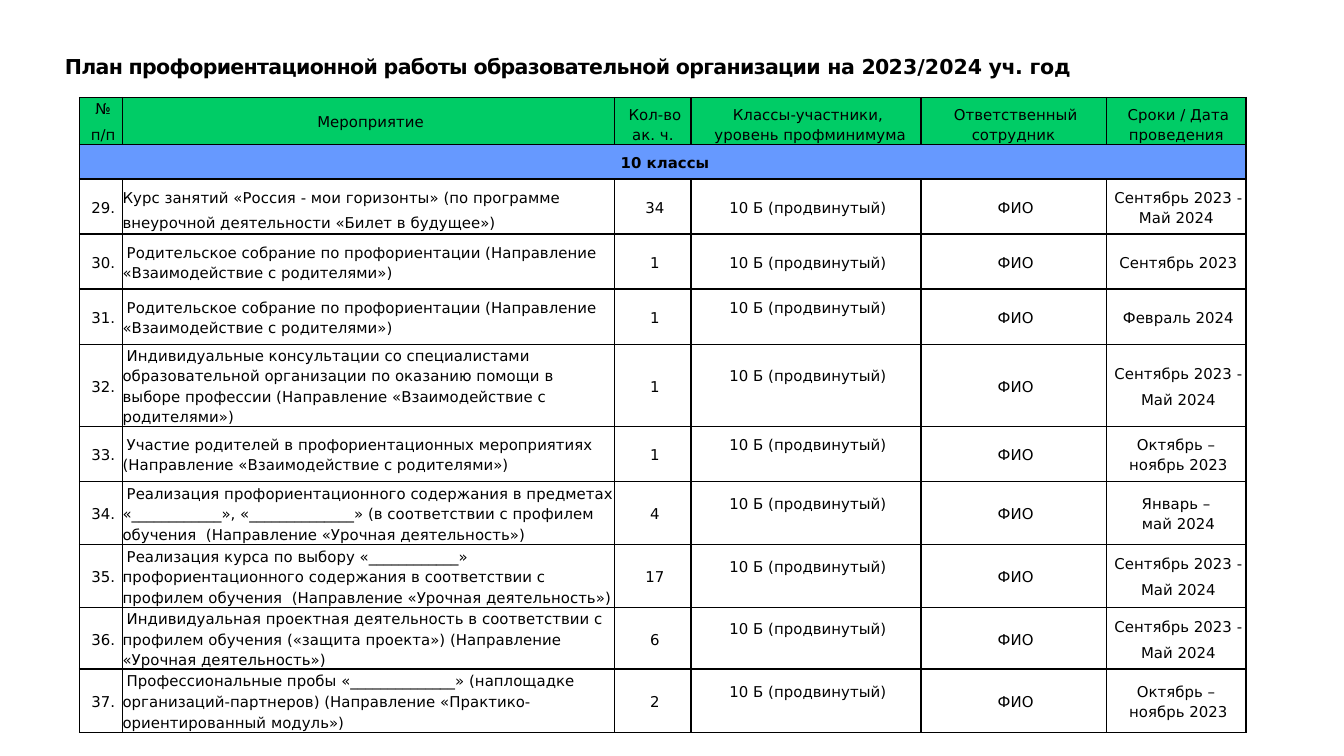
from lxml import etree
from pptx import Presentation
from pptx import util as u
from pptx.dml.color import RGBColor
from pptx.enum import text
from pptx.oxml.ns import qn

FONT = "DejaVu Sans"
BLACK, WHITE, GREEN, BLUE = "000000", "FFFFFF", "00CC66", "6699FF"
CENTER, LEFT = text.PP_ALIGN.CENTER, text.PP_ALIGN.LEFT
MIDDLE, BOTTOM = text.MSO_ANCHOR.MIDDLE, text.MSO_ANCHOR.BOTTOM


def color(hex_code):
    return RGBColor.from_string(hex_code)


def fill_cell(cell, content, fill, anchor=MIDDLE, align=CENTER, bold=False,
              leading=11, indent=2.2, gap=0):
    cell.margin_left = cell.margin_right = cell.margin_top = cell.margin_bottom = 0
    cell.vertical_anchor = anchor
    cell.text_frame.text = content
    lines = cell.text_frame.paragraphs
    for line in lines:
        line.alignment = align
        line.line_spacing = u.Pt(leading)
        line._p.get_or_add_pPr().set("indent", str(u.Pt(indent)))
        for run in line.runs:
            run.font.name, run.font.size, run.font.bold = FONT, u.Pt(8), bold
            run.font.color.rgb = color(BLACK)
    if len(lines) > 1:
        lines[0].space_after = u.Pt(gap)
    # Borders come before the fill in the cell properties
    properties = cell._tc.get_or_add_tcPr()
    for side in ("a:lnL", "a:lnR", "a:lnT", "a:lnB"):
        border = etree.SubElement(properties, qn(side), w=str(u.Pt(1)))
        paint = etree.SubElement(border, qn("a:solidFill"))
        etree.SubElement(paint, qn("a:srgbClr"), val=BLACK)
    cell.fill.solid()
    cell.fill.fore_color.rgb = color(fill)


prs = Presentation()
prs.slide_width, prs.slide_height = u.Pt(720), u.Pt(405)
slide = prs.slides.add_slide(prs.slide_layouts[6])

# Title, with letter spacing in hundredths of a point
title_parts = [
    ("План профориентационной работы образовательной организации ", -40),
    ("на ", -30), ("202", -40), ("3", -50), ("/", -130), ("2", -150),
    ("0", -40), ("2", -50), ("4 ", -40), ("уч. ", -30), ("год", -10),
]
title = slide.shapes.add_textbox(u.Pt(24.5), u.Pt(28.1), u.Pt(559.4), u.Pt(14.4)).text_frame
title.word_wrap = True
title.auto_size = text.MSO_AUTO_SIZE.SHAPE_TO_FIT_TEXT
title.margin_left = title.margin_right = title.margin_bottom = 0
title.margin_top = u.Pt(0.9)
title.paragraphs[0].alignment = CENTER
for part, spacing in title_parts:
    run = title.paragraphs[0].add_run()
    run.text = part
    run.font.name, run.font.size, run.font.bold = FONT, u.Pt(11), True
    run.font.color.rgb = color(BLACK)
    run._r.get_or_add_rPr().set("spc", str(spacing))

# Plan contents: event, hours, dates
headers = ["№\nп/п", "Мероприятие", "Кол-во ак. ч.",
           "Классы-участники,\n уровень профминимума",
           "Ответственный сотрудник", "Сроки / Дата проведения"]
meeting = ("Родительское собрание по профориентации "
           "(Направление «Взаимодействие с родителями»)")
school_year = "Сентябрь 2023 -\nМай 2024"
autumn = "Октябрь – \nноябрь 2023"
events = [
    ("Курс занятий «Россия - мои горизонты» (по программе внеурочной "
     "деятельности «Билет в будущее»)", "34", "Сентябрь 2023 - Май 2024"),
    (meeting, "1", "Сентябрь 2023"),
    (meeting, "1", "Февраль 2024"),
    ("Индивидуальные консультации со специалистами образовательной организации "
     "по оказанию помощи в выборе профессии (Направление «Взаимодействие с "
     "родителями»)", "1", school_year),
    ("Участие родителей в профориентационных мероприятиях "
     "(Направление «Взаимодействие с родителями»)", "1", autumn),
    ("Реализация профориентационного содержания в предметах «____________», "
     "«______________» (в соответствии с профилем обучения  "
     "(Направление «Урочная деятельность»)", "4", "Январь – \nмай 2024"),
    ("Реализация курса по выбору «____________» профориентационного содержания "
     "в соответствии с профилем обучения  (Направление «Урочная деятельность»)",
     "17", school_year),
    ("Индивидуальная проектная деятельность в соответствии с профилем обучения "
     "(«защита проекта») (Направление «Урочная деятельность»)", "6", school_year),
    ("Профессиональные пробы «______________» (наплощадке организаций-партнеров) "
     "(Направление «Практико-ориентированный модуль»)", "2", autumn),
]

# Table grid
widths = [23, 263.6, 41, 123, 99.5, 74.9]
heights = [22.3, 18.7, 29.5, 29.5, 29.5, 33.1, 29.5, 33.8, 33.8, 29.5, 33.8]
plan = slide.shapes.add_table(len(heights), len(widths), u.Pt(42.7), u.Pt(52.3),
                              u.Pt(sum(widths)), u.Pt(sum(heights))).table
plan.first_row = plan.horz_banding = False
for column, width in zip(plan.columns, widths):
    column.width = u.Pt(width)
for row, height in zip(plan.rows, heights):
    row.height = u.Pt(height)

# Header row
for col, header in enumerate(headers):
    fill_cell(plan.cell(0, col), header, GREEN,
              anchor=MIDDLE if col == 1 else BOTTOM, gap=3 if col == 0 else 0)

# Grade row across the whole table
plan.cell(1, 0).merge(plan.cell(1, len(widths) - 1))
for col in range(len(widths)):
    fill_cell(plan.cell(1, col), "" if col else "10 классы", BLUE, bold=True)

# Event rows
for index, (event, hours, dates) in enumerate(events):
    values = [f"{29 + index}.", event, hours, "10 Б (продвинутый)", "ФИО", dates]
    for col, value in enumerate(values):
        course = index == 0 and col == 1
        fill_cell(plan.cell(index + 2, col), value, WHITE,
                  align=LEFT if col == 1 else CENTER,
                  leading=13.7 if course else 11, indent=0 if course else 2.2,
                  gap=3 if value == school_year else 0)
    # From the third event on, the class sits half a line higher
    if index >= 2:
        plan.cell(index + 2, 3).margin_bottom = u.Pt(11)

prs.save("out.pptx")
